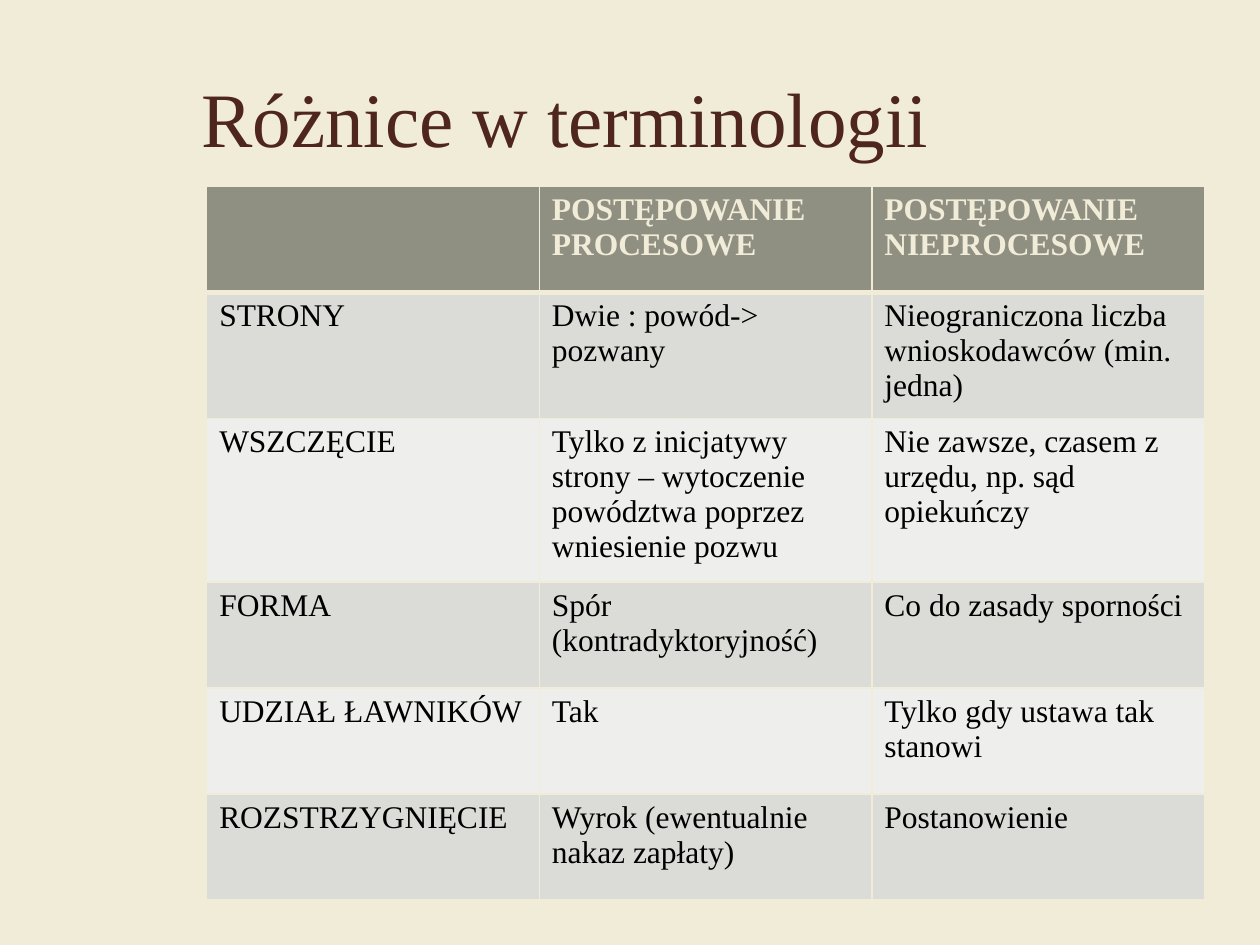
"""Build the slide comparing the terms of two kinds of civil proceedings."""
from lxml import etree
from pptx import Presentation, util as u
from pptx.dml.color import RGBColor
from pptx.enum import text
from pptx.oxml.ns import qn

COLORS = {"paper": "F1ECD8", "title": "4F261E", "head": "909082",
          "odd": "DBDBD8", "even": "EEEEED", "ink": "000000"}
ROWS = [
    ("", "POSTĘPOWANIE PROCESOWE", "POSTĘPOWANIE NIEPROCESOWE"),
    ("STRONY", "Dwie : powód-> pozwany",
     "Nieograniczona liczba wnioskodawców (min. jedna)"),
    ("WSZCZĘCIE",
     "Tylko z inicjatywy strony – wytoczenie powództwa poprzez wniesienie pozwu",
     "Nie zawsze, czasem z urzędu, np. sąd opiekuńczy"),
    ("FORMA", "Spór (kontradyktoryjność)", "Co do zasady sporności"),
    ("UDZIAŁ ŁAWNIKÓW", "Tak", "Tylko gdy ustawa tak stanowi"),
    ("ROZSTRZYGNIĘCIE", "Wyrok (ewentualnie nakaz zapłaty)", "Postanowienie"),
]


def write(tf, words, color, **fmt):
    r = tf.paragraphs[0].add_run()
    r.text = words
    for name, value in {"name": "Times New Roman", **fmt}.items():
        setattr(r.font, name, value)
    r.font.color.rgb = RGBColor.from_string(COLORS[color])


def border(cell, side, width):
    ln = etree.SubElement(cell._tc.get_or_add_tcPr(), qn(f"a:ln{side}"),
                          w=str(u.Pt(width)))
    fill = etree.SubElement(ln, qn("a:solidFill"))
    etree.SubElement(fill, qn("a:srgbClr"), val=COLORS["paper"])


prs = Presentation()
prs.slide_width, prs.slide_height = u.Inches(10), u.Inches(7.5)
W, H = prs.slide_width, prs.slide_height
s = prs.slides.add_slide(prs.slide_layouts[6])
s.background.fill.solid()
s.background.fill.fore_color.rgb = RGBColor.from_string(COLORS["paper"])

tf = s.shapes.add_textbox(int(W * 0.15), int(H * 0.04),
                          int(W * 0.8), int(H / 6)).text_frame
tf.word_wrap = True
tf.vertical_anchor = text.MSO_ANCHOR.MIDDLE
write(tf, "Różnice w terminologii", "title", size=u.Pt(44))

col_w, row_h = u.Inches(2.64), u.Inches(0.84)
table = s.shapes.add_table(len(ROWS), 3, u.Inches(1.64), u.Inches(1.48),
                           3 * col_w, len(ROWS) * row_h).table
for col in table.columns:
    col.width = col_w
for i, row in enumerate(ROWS):
    table.rows[i].height = row_h
    head = i == 0
    fill = "head" if head else ("even", "odd")[i % 2]
    for j, words in enumerate(row):
        cell = table.cell(i, j)
        for side in "LRTB":
            heavy = (i, side) in ((0, "B"), (1, "T"))
            border(cell, side, 3 if heavy else 1)
        cell.fill.solid()
        cell.fill.fore_color.rgb = RGBColor.from_string(COLORS[fill])
        if words:
            write(cell.text_frame, words, "paper" if head else "ink",
                  size=u.Pt(18), bold=head)

prs.save("out.pptx")
